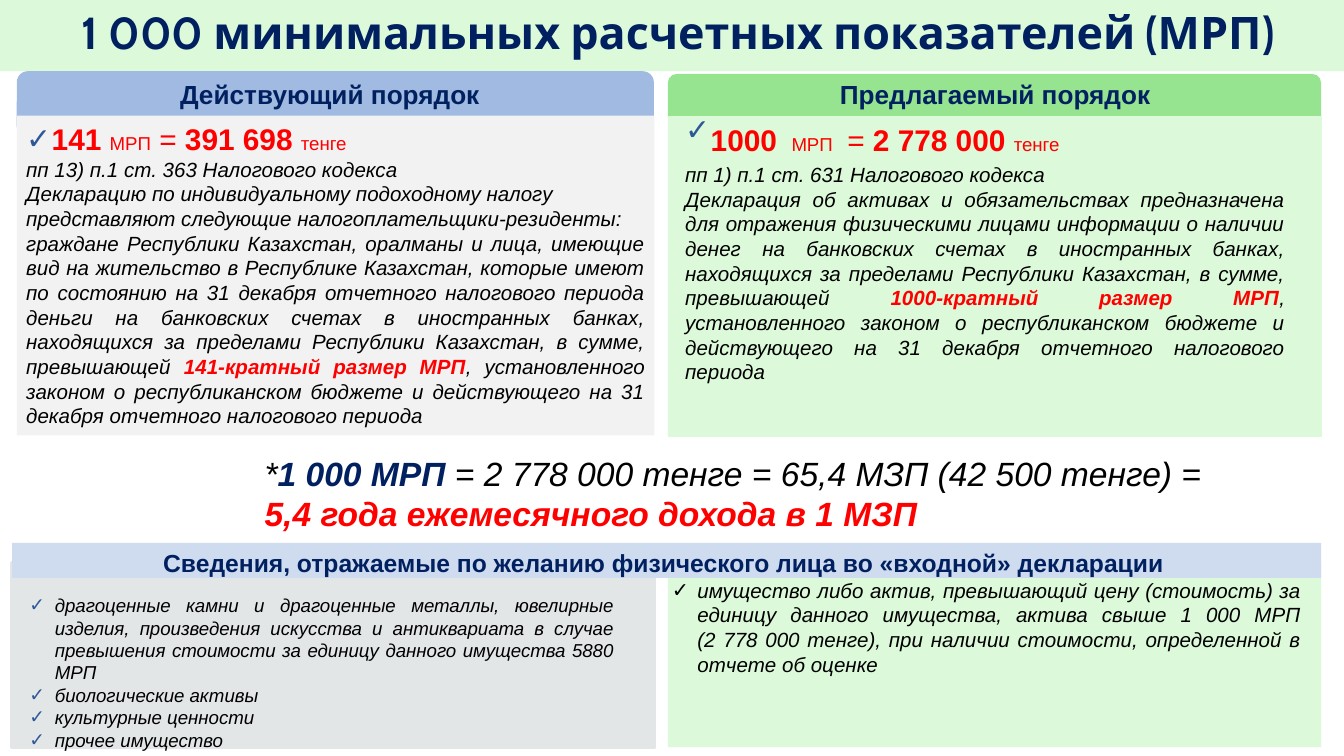
from collections import namedtuple

from lxml.etree import SubElement
from pptx import Presentation
from pptx.dml.color import RGBColor
from pptx.enum.shapes import MSO_SHAPE
from pptx.enum.text import MSO_ANCHOR, PP_ALIGN
from pptx.oxml.ns import qn
from pptx.util import Inches, Pt

NAVY = RGBColor(0x00, 0x20, 0x60)
BLACK = RGBColor(0x00, 0x00, 0x00)
RED = RGBColor(0xFF, 0x00, 0x00)
TICK_BLUE = RGBColor(0x2F, 0x58, 0x97)
PALE_GREEN = RGBColor(0xDC, 0xFA, 0xDA)
GREEN = RGBColor(0x96, 0xE4, 0x90)
BLUE = RGBColor(0xA0, 0xBA, 0xE1)
PALE_BLUE = RGBColor(0xCF, 0xDC, 0xF0)
PALE_GREY = RGBColor(0xF2, 0xF2, 0xF2)
GREY = RGBColor(0xE3, 0xE6, 0xE7)

WIDTH = Inches(10)
HEIGHT = WIDTH * 9 // 16
COLUMN, ROW = WIDTH / 100, HEIGHT / 56.25
TIGHT = (0.07, 0.04, 0.04)
RAISED = (0.07, 0.04, 0.1)
ROOMY = (0.1, 0.05, 0.05)

Box = namedtuple("Box", "left top width height")
Run = namedtuple("Run", "text size color bold italic font",
                 defaults=(11, BLACK, False, True, "Arial"))
Line = namedtuple("Line", "runs align bullet", defaults=(PP_ALIGN.LEFT, None))


def part(box, left, top, width, height):
    return Box(box.left + left, box.top + top, width, height)


def emu(box):
    return (round(box.left * COLUMN), round(box.top * ROW),
            round(box.width * COLUMN), round(box.height * ROW))


def add_panel(slide, box, fill, preset=MSO_SHAPE.RECTANGLE, border=None):
    panel = slide.shapes.add_shape(preset, *emu(box))
    panel.shadow.inherit = False
    panel.fill.solid()
    panel.fill.fore_color.rgb = fill
    if border:
        panel.line.color.rgb = fill
        panel.line.width = Pt(border)
    else:
        panel.line.fill.background()
    return panel


def add_tick(paragraph, color):
    properties = paragraph._p.get_or_add_pPr()
    properties.set("marL", str(Inches(0.19)))
    properties.set("indent", str(-Inches(0.19)))
    tick_color = SubElement(properties, qn("a:buClr"))
    SubElement(tick_color, qn("a:srgbClr")).set("val", str(color))
    SubElement(properties, qn("a:buFont")).set("typeface", "Arial")
    SubElement(properties, qn("a:buChar")).set("char", "✓")


def write(holder, lines, inset=ROOMY, anchor=MSO_ANCHOR.TOP, wrap=True):
    frame = holder.text_frame
    frame.word_wrap = wrap
    frame.vertical_anchor = anchor
    side, top, bottom = inset
    frame.margin_left = frame.margin_right = Inches(side)
    frame.margin_top, frame.margin_bottom = Inches(top), Inches(bottom)
    frame.text = "\n".join("" for _ in lines)
    for paragraph, line in zip(frame.paragraphs, lines):
        paragraph.alignment = line.align
        if line.bullet is not None:
            add_tick(paragraph, line.bullet)
        for piece in line.runs:
            for index, text in enumerate(piece.text.split("\v")):
                if index:
                    paragraph.add_line_break()
                run = paragraph.add_run()
                run.text = text
                run.font.size = Pt(piece.size)
                run.font.color.rgb = piece.color
                run.font.bold = piece.bold
                run.font.italic = piece.italic
                run.font.name = piece.font


def add_text(slide, box, lines, **options):
    write(slide.shapes.add_textbox(*emu(box)), lines, **options)


def navy(text, size, font="Arial"):
    return Run(text, size, NAVY, True, False, font)


def heading(*runs):
    return [Line(runs, PP_ALIGN.CENTER)]


def red(text, size=16, bold=False):
    return Run(text, size, RED, bold, False)


def add_title(slide, box):
    write(add_panel(slide, box, PALE_GREEN),
          heading(navy(" ", 24),
                  navy("1 000 минимальных расчетных показателей (МРП)", 24, "Cabin")),
          RAISED, MSO_ANCHOR.MIDDLE)


def add_header(slide, box, fill, title, title_box):
    add_panel(slide, box, fill, MSO_SHAPE.ROUNDED_RECTANGLE)
    add_text(slide, title_box, heading(navy(title, 14)), inset=TIGHT)


def order_lines(amount, article, before, limit, after, article_align=PP_ALIGN.LEFT):
    return [
        Line(amount, bullet=TICK_BLUE),
        Line([Run(article)], article_align),
        *before[:-1],
        Line([Run(before[-1]), Run(limit, 11, RED, True), Run(after)],
             PP_ALIGN.JUSTIFY),
    ]


AFTER_LIMIT = (", установленного законом о республиканском бюджете и действующего "
               "на 31 декабря отчетного налогового периода")
ABROAD = ("банковских счетах в иностранных банках, находящихся за пределами "
          "Республики Казахстан, в сумме, превышающей ")


def add_current_order(slide, box):
    add_header(slide, part(box, 0, 0, 47.4, 4.9), BLUE, "Действующий порядок",
               part(box, 0, 0.15, 46.6, 3.1))
    amount = [red("141 ", bold=True), red("МРП", 10), red(" = "),
              red("391 698 ", bold=True), red("тенге", 10)]
    before = [
        Line([Run("Декларацию по индивидуальному подоходному налогу "
                  "представляют следующие налогоплательщики-резиденты:")]),
        "граждане Республики Казахстан, оралманы и лица, имеющие вид на "
        "жительство в Республике Казахстан, которые имеют по состоянию на "
        "31 декабря отчетного налогового периода деньги на " + ABROAD,
    ]
    body = add_panel(slide, part(box, 0, 3.3, 47.45, 23.8), PALE_GREY)
    write(body, order_lines(amount, "пп 13) п.1 ст. 363 Налогового кодекса",
                            before, "141-кратный размер МРП", AFTER_LIMIT), TIGHT)


def add_proposed_order(slide, box):
    add_header(slide, part(box, 0, 0.2, 48.6, 3.9), GREEN, "Предлагаемый порядок",
               part(box, 0, 0.1, 48.7, 3.1))
    amount = [red("1000", bold=True), red(" ", 28), red("МРП", 10), red(" ", 28),
              red("= "), red("2 778 000 ", bold=True), red("тенге", 10)]
    before = ["Декларация об активах и обязательствах предназначена для отражения "
              "физическими лицами информации о наличии денег на " + ABROAD]
    add_panel(slide, part(box, 0, 3.35, 48.6, 23.8), PALE_GREEN, border=0.25)
    add_text(slide, part(box, 0.3, 1.6, 46.6, 23.6),
             order_lines(amount, "пп 1) п.1 ст. 631 Налогового кодекса", before,
                         "1000-кратный размер МРП", AFTER_LIMIT, PP_ALIGN.JUSTIFY))


def add_equation(slide, box):
    add_text(slide, box, [
        Line([Run("*", 18), Run("1 000 МРП ", 18, NAVY, True),
              Run("= 2 778 000 тенге = 65,4 МЗП (42 500 тенге) =", 18)]),
        Line([Run("5,4 года ежемесячного дохода в 1 МЗП", 18, RED, True)]),
    ], wrap=False)


def add_voluntary_items(slide, box):
    add_panel(slide, part(box, 48.8, 1.5, 48.6, 13.7), PALE_GREEN)
    add_text(slide, part(box, 48.1, 2.1, 48.8, 8.4), [
        Line([Run("имущество либо актив, превышающий цену (стоимость) за единицу "
                  "данного имущества, актива свыше 1 000 МРП\v(2 778 000 тенге), при "
                  "наличии стоимости, определенной в отчете об оценке")],
             PP_ALIGN.JUSTIFY, BLACK)])
    add_panel(slide, part(box, 0, 1.5, 47.8, 13.7), GREY, border=2)
    items = [
        "драгоценные камни и драгоценные металлы, ювелирные изделия, произведения "
        "искусства и антиквариата в случае превышения стоимости за единицу данного "
        "имущества 5880 МРП",
        "биологические активы ",
        "культурные ценности",
        "прочее имущество",
    ]
    add_text(slide, part(box, 0.3, 3.3, 45.4, 12.8),
             [Line([Run(item, 10)], PP_ALIGN.JUSTIFY, TICK_BLUE) for item in items])
    write(add_panel(slide, part(box, 0, 0, box.width, 2.6), PALE_BLUE), heading(navy(
        "Сведения, отражаемые по желанию физического лица во «входной» декларации ",
        13.2)), TIGHT)


def main():
    deck = Presentation()
    deck.slide_width, deck.slide_height = WIDTH, HEIGHT
    slide = deck.slides.add_slide(deck.slide_layouts[6])
    add_title(slide, Box(0, 0, 100, 5.3))
    add_equation(slide, Box(18.7, 33.2, 73.1, 7.1))
    add_current_order(slide, Box(1.25, 5.3, 47.5, 27.1))
    add_proposed_order(slide, Box(49.7, 5.3, 48.7, 27.1))
    add_voluntary_items(slide, Box(0.9, 40.4, 97.4, 15.2))
    deck.save("out.pptx")


if __name__ == "__main__":
    main()
